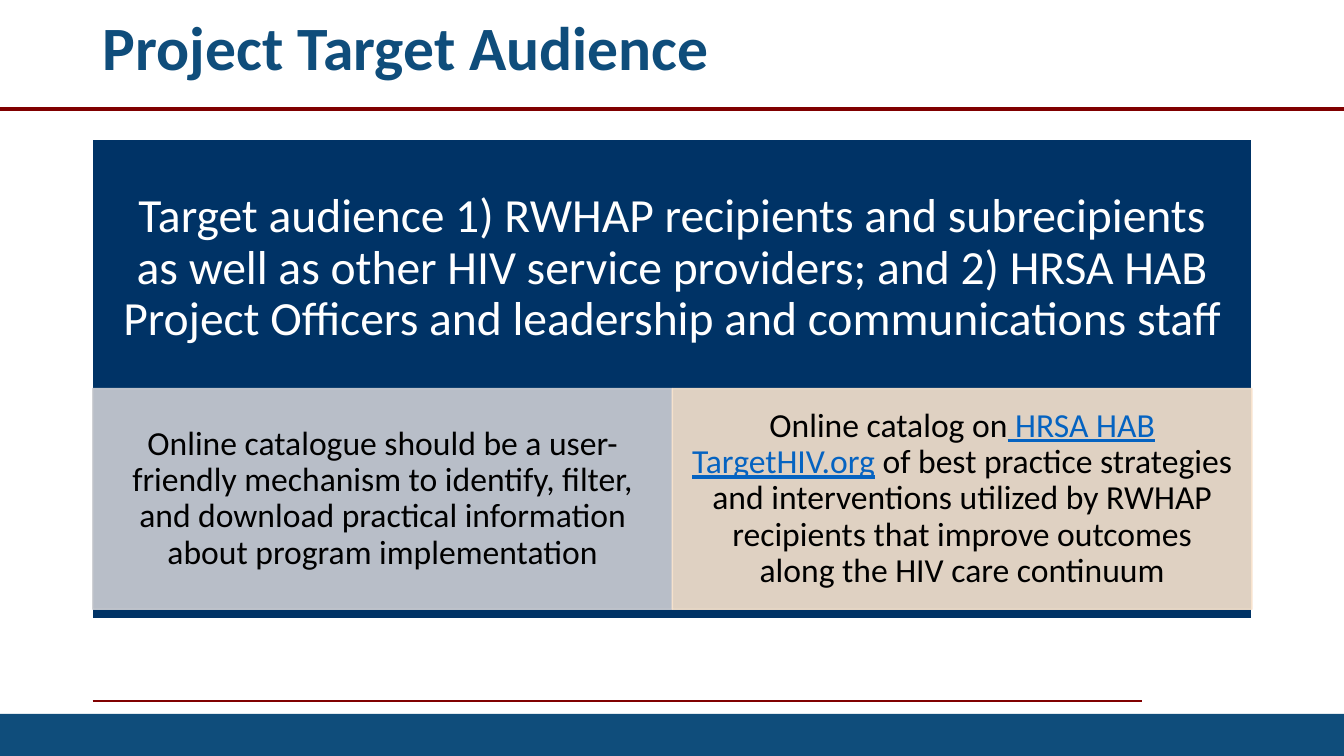
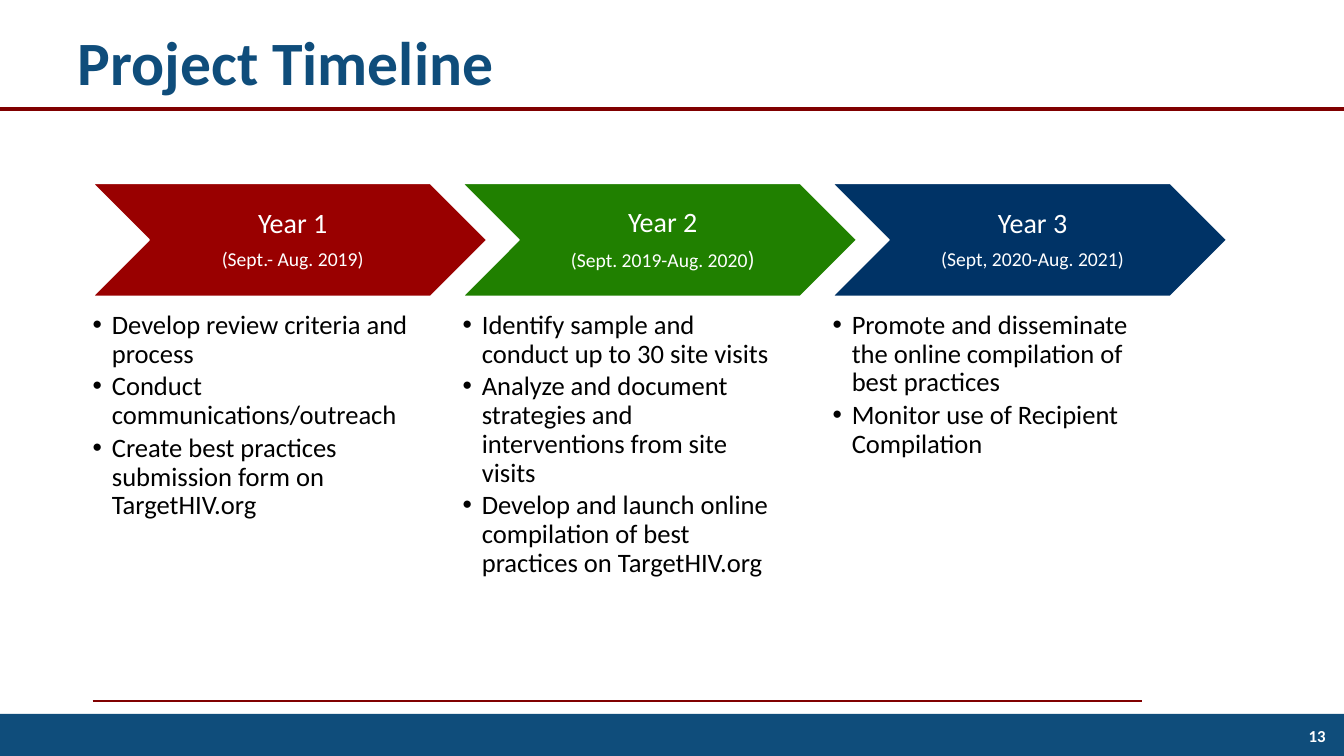
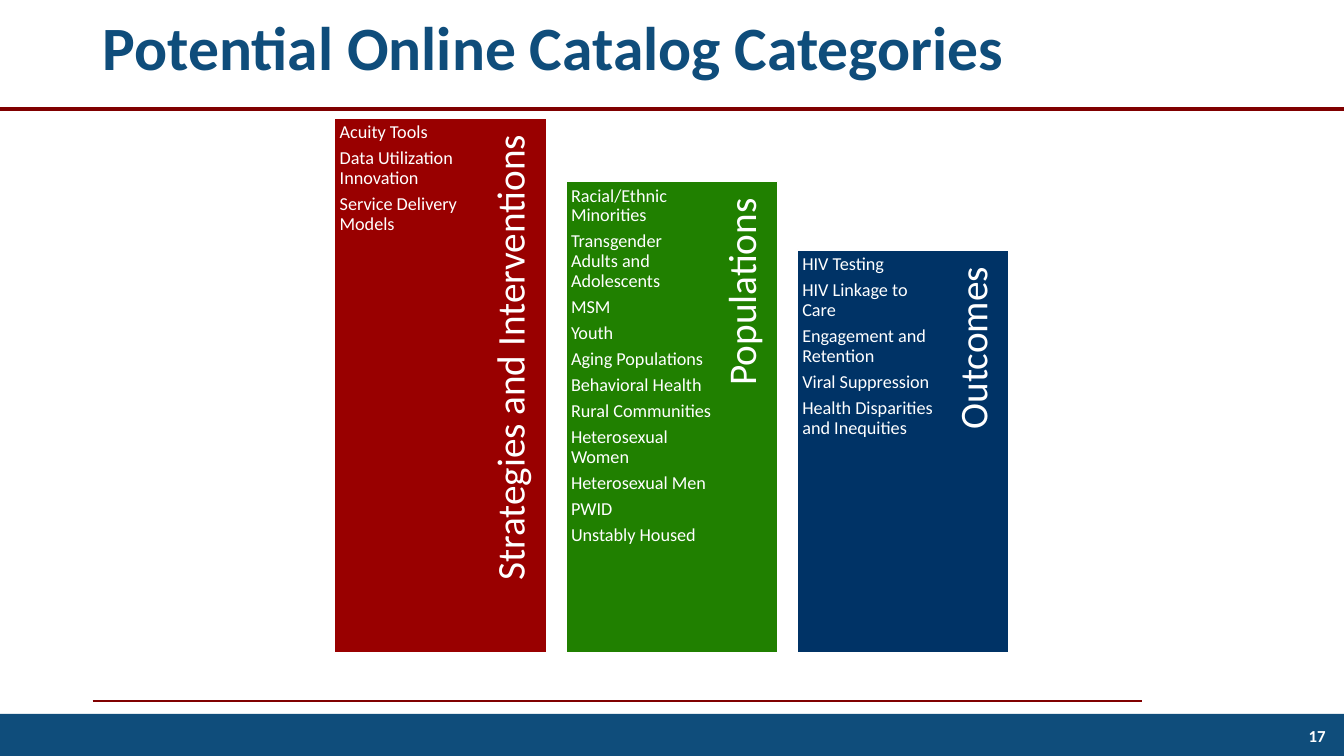
"""Builds three project slides: target audience, timeline and catalog categories."""
from lxml.etree import SubElement
from pptx import Presentation
from pptx.dml.color import RGBColor
from pptx.enum.shapes import MSO_CONNECTOR, MSO_SHAPE
from pptx.enum.text import MSO_ANCHOR, MSO_AUTO_SIZE, PP_ALIGN
from pptx.oxml.ns import qn
from pptx.util import Pt

FONT = "Calibri"
WIDE, HIGH = 960, 540
LEFT = 66.24
COLORS = {
    "white": "FFFFFF", "black": "000000", "band": "0F4D7B", "rule": "800000",
    "red": "990000", "green": "208000", "navy": "003366",
    "gray": "CCCED3", "sand": "F8E3CD", "link": "0563C1",
}
HUES = ["red", "green", "navy"]
COMPARE, TITLE = 4, 5

YEARS = [
    (["Year 1", [("(Sept.- Aug. 2019)", {"size": 14})]],
     ["Develop review criteria and process",
      "Conduct communications/outreach",
      "Create best practices submission form on TargetHIV.org"]),
    (["Year 2", [("(Sept. 2019-Aug. 2020", {"size": 14}), (")", {"size": 16})]],
     ["Identify sample and conduct up to 30 site visits",
      "Analyze and document strategies and interventions from site visits",
      "Develop and launch online compilation of best practices on TargetHIV.org"]),
    (["Year 3", [("(Sept, 2020-Aug. 2021)", {"size": 14})]],
     ["Promote and disseminate the online compilation of best practices",
      "Monitor use of Recipient Compilation"]),
]

GROUPS = [
    ("Strategies and Interventions", 84.24,
     ["Acuity Tools", "Data Utilization Innovation", "Service Delivery Models"]),
    ("Populations", 129.6,
     ["Racial/Ethnic Minorities", "Transgender Adults and Adolescents", "MSM",
      "Youth", "Aging Populations", "Behavioral Health", "Rural Communities",
      "Heterosexual Women", "Heterosexual Men", "PWID", "Unstably Housed"]),
    ("Outcomes", 178.56,
     ["HIV Testing", "HIV Linkage to Care", "Engagement and Retention",
      "Viral Suppression", "Health Disparities and Inequities"]),
]


def color(name):
    return RGBColor.from_string(COLORS[name])


def place(shape, box):
    shape.left, shape.top, shape.width, shape.height = [Pt(n) for n in box]


def write(shape, paras, size=18, ink="black", bold=False, align=PP_ALIGN.LEFT,
          anchor=MSO_ANCHOR.MIDDLE, inset=(7.2, 3.6, 7.2, 3.6), space=0.9,
          after=0, bullet=None):
    frame = shape.text_frame
    frame.word_wrap = True
    frame.auto_size = MSO_AUTO_SIZE.NONE
    frame.vertical_anchor = anchor
    (frame.margin_left, frame.margin_top,
     frame.margin_right, frame.margin_bottom) = [Pt(n) for n in inset]
    for index, runs in enumerate(paras):
        para = frame.add_paragraph() if index else frame.paragraphs[0]
        props = para._p.get_or_add_pPr()
        hang = Pt(13.68) if bullet else 0
        props.set("marL", str(hang))
        props.set("indent", str(-hang))
        if bullet:
            SubElement(props, qn("a:buChar"), char=bullet)
        else:
            SubElement(props, qn("a:buNone"))
        para.alignment = align
        para.line_spacing = space
        para.space_before = Pt(0)
        para.space_after = Pt(after)
        for text, look in [(runs, {})] if isinstance(runs, str) else runs:
            run = para.add_run()
            run.text = text
            font = run.font
            font.name = FONT
            font.size = Pt(look.get("size", size))
            font.bold = bold
            font.underline = look.get("under", False)
            font.color.rgb = color(look.get("ink", ink))


def block(slide, box, fill, line=None, kind=MSO_SHAPE.RECTANGLE, alpha=None):
    shape = slide.shapes.add_shape(kind, *[Pt(n) for n in box])
    shape.shadow.inherit = False
    shape.fill.solid()
    shape.fill.fore_color.rgb = color(fill)
    if line:
        shape.line.color.rgb = color(line)
        shape.line.width = Pt(1)
    else:
        shape.line.fill.background()
    if alpha:
        for tint in shape.element.spPr.iter(qn("a:srgbClr")):
            SubElement(tint, qn("a:alpha"), val=str(alpha * 1000))
    return shape


def label(slide, box, paras, **look):
    shape = slide.shapes.add_textbox(*[Pt(n) for n in box])
    write(shape, paras, **look)
    return shape


def rule(slide, start, end, y, width):
    line = slide.shapes.add_connector(
        MSO_CONNECTOR.STRAIGHT, Pt(start), Pt(y), Pt(end), Pt(y))
    line.line.color.rgb = color("rule")
    line.line.width = Pt(width)
    SubElement(line.element.spPr, qn("a:effectLst"))
    return line


def brand(deck, slide):
    parts = [
        rule(slide, LEFT, 816, 500.4, 1.5),
        block(slide, (0, 510, WIDE, 30), "band"),
        rule(slide, 0, WIDE, 77.76, 3),
    ]
    tree = deck.slide_master.element.cSld.spTree
    for number, part in enumerate(parts, 101):
        part.element.xpath("./*/p:cNvPr")[0].set("id", str(number))
        tree.append(part.element)


def start(deck, kind, title, left=LEFT, top=-15.84, page=None):
    slide = deck.slides.add_slide(deck.slide_layouts[kind])
    place(slide.shapes.title, (left, top, 828, 104.4))
    write(slide.shapes.title, [title], size=44, ink="band", bold=True)
    if page:
        label(slide, (738, 511.2, 216, 28.8), [page], size=12, ink="white",
              bold=True, align=PP_ALIGN.RIGHT, space=1)
    return slide


def bodies(slide, count):
    found = [item for item in slide.placeholders if item.placeholder_format.idx]
    for extra in found[count:]:
        slide.shapes.element.remove(extra.element)
    return found[:count]


def panel(slide, box):
    left, top, width, height = box
    block(slide, box, "navy", "white")
    label(slide, (left, top, width, height * 0.54),
          ["Target audience 1) RWHAP recipients and subrecipients as well as "
           "other HIV service providers; and 2) HRSA HAB Project Officers and "
           "leadership and communications staff"],
          size=34, ink="white", align=PP_ALIGN.CENTER, inset=(18.72,) * 4,
          after=11.9)
    tiles = [
        ("gray", "Online catalogue should be a user-friendly mechanism to identify, "
                 "filter, and download practical information about program "
                 "implementation"),
        ("sand", [("Online catalog on", {}),
                  (" HRSA HAB TargetHIV.org", {"ink": "link", "under": True}),
                  (" of best practice strategies and interventions utilized by "
                   "RWHAP recipients that improve outcomes along the HIV care "
                   "continuum", {})]),
    ]
    half = width / 2
    for index, (fill, text) in enumerate(tiles):
        tile = block(slide, (left + half * index, top + height * 0.52,
                             half, height * 0.46), fill, fill, alpha=90)
        write(tile, [text], size=24, align=PP_ALIGN.CENTER,
              inset=(13.68, 2.16, 13.68, 2.16), after=8.4)


def phase(slide, body, box, hue, head, items):
    left, top, width, height = box
    arrow = block(slide, box, hue, "white", MSO_SHAPE.CHEVRON)
    write(arrow, head, size=20, ink="white", align=PP_ALIGN.CENTER,
          inset=(6.48, 2.16, 2.16, 2.16), after=7)
    place(body, (left, top + height + 10.8, width * 0.8, 198.72))
    write(body, items, size=19, anchor=MSO_ANCHOR.TOP, inset=(0,) * 4,
          after=2.85, bullet="•")


def column(slide, body, box, hue, head, items):
    left, top, width, height = box
    block(slide, box, hue, "white")
    long, thick = height * 0.9, 39.6
    name = label(slide, (left + 128.16 - long / 2, top + (long - thick) / 2,
                         long, thick), [head], size=28, ink="white",
                 align=PP_ALIGN.RIGHT, inset=(8.64, 0, 12.24, 2.88), after=9.8)
    name.rotation = 270
    place(body, (left, top, 107.28, height))
    write(body, items, size=13, ink="white", anchor=MSO_ANCHOR.TOP,
          inset=(3.6,) * 4, after=4.55)
    slide.shapes.element.append(body.element)


def main():
    deck = Presentation()
    deck.slide_width, deck.slide_height = Pt(WIDE), Pt(HIGH)

    slide = start(deck, TITLE, "Project Target Audience")
    brand(deck, slide)
    panel(slide, (LEFT, 99.36, 828, 342.72))

    slide = start(deck, COMPARE, "Project Timeline", 48.24, -5.04, "13")
    for index, (body, hue, year) in enumerate(zip(bodies(slide, 3), HUES, YEARS)):
        phase(slide, body, (LEFT + 264.24 * index, 131.04, 281.52, 80.64), hue, *year)

    slide = start(deck, COMPARE, "Potential Online Catalog Categories", page="17")
    for index, (body, hue, group) in enumerate(zip(bodies(slide, 3), HUES, GROUPS)):
        head, top, items = group
        column(slide, body, (239.04 + 165.24 * index, top, 151.2, 466.56 - top),
               hue, head, items)

    deck.save("out.pptx")


if __name__ == "__main__":
    main()
